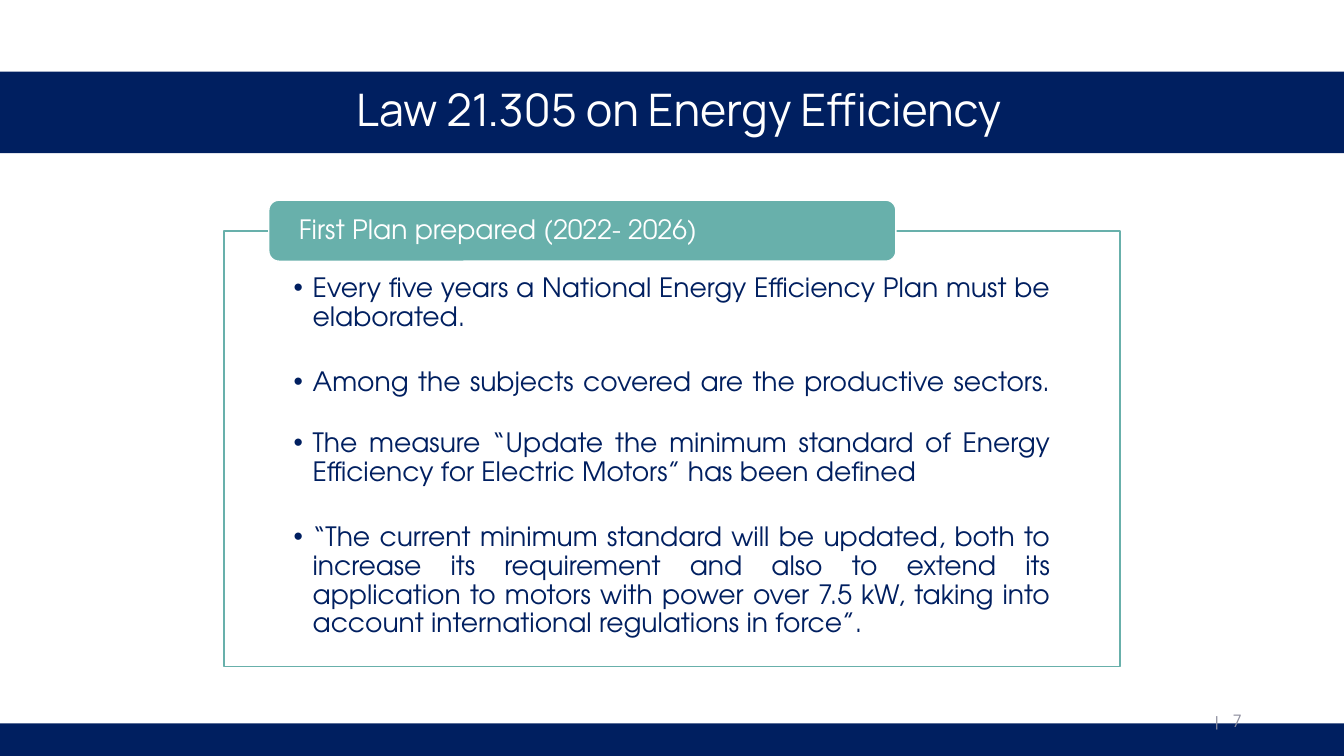
from dataclasses import dataclass

from lxml import etree
from pptx import Presentation
from pptx.dml.color import RGBColor
from pptx.enum.shapes import MSO_SHAPE
from pptx.enum.text import MSO_ANCHOR, MSO_AUTO_SIZE, PP_ALIGN
from pptx.oxml.ns import qn
from pptx.util import Pt

RECT, ROUNDED = MSO_SHAPE.RECTANGLE, MSO_SHAPE.ROUNDED_RECTANGLE
TOP, MIDDLE = MSO_ANCHOR.TOP, MSO_ANCHOR.MIDDLE
LEFT, CENTER, RIGHT, JUSTIFY = PP_ALIGN.LEFT, PP_ALIGN.CENTER, PP_ALIGN.RIGHT, PP_ALIGN.JUSTIFY
NO_AUTOFIT = MSO_AUTO_SIZE.NONE

COLORS = {"navy": "001F60", "teal": "68B0AB", "white": "FFFFFF", "grey": "8C8D9D"}
TITLE_FONT, BODY_FONT = "Manrope", "TeX Gyre Adventor"
BODY_SIZE = 19
SLIDE_WIDTH, SLIDE_HEIGHT = 960, 540
BULLET_INDENT = 13.7


@dataclass
class Block:
    left: float
    top: float
    width: float
    height: float
    fill: str | None = None
    line: str | None = None
    insets: tuple[float, float, float, float] = (7.2, 3.6, 7.2, 3.6)
    anchor: MSO_ANCHOR = MIDDLE


@dataclass
class Duty:
    text: str
    gap_after: float = 26
    full_width: bool = False  # stretch the closing line to both margins


TITLE_BAND = Block(0, 51.1, SLIDE_WIDTH, 58.3, "navy", None, (51, 3, 41, 4))
FOOTER_BAND = Block(0, 516.7, SLIDE_WIDTH, 23.8, "navy")
PLAN_FRAME = Block(160, 165, 640, 311, "white", "teal", (49.7, 31, 49.7, 10.8), TOP)
PLAN_TAB = Block(192, 143, 448, 43.6, "teal", "white", (19.4, 0, 19.4, 0))
PAGE_NUMBER = Block(678.2, 500.4, 216, 28.8)

DUTIES = [
    Duty("Every five years a National Energy Efficiency Plan must be elaborated."),
    Duty("Among the subjects covered are the productive sectors.", 3, True),
    Duty("The measure “Update the minimum standard of Energy Efficiency "
         "for Electric Motors” has been defined"),
    Duty("“The current minimum standard will be updated, both to increase its "
         "requirement and also to extend its application to motors with power over "
         "7.5 kW, taking into account international regulations in force”.", 0),
]


def rgb(name: str) -> RGBColor:
    return RGBColor.from_string(COLORS[name])


def format_block(shape, block: Block) -> None:
    """Place a shape and set its fill, outline and text frame."""
    shape.left, shape.top = Pt(block.left), Pt(block.top)
    shape.width, shape.height = Pt(block.width), Pt(block.height)
    if block.fill:
        shape.fill.solid()
        shape.fill.fore_color.rgb = rgb(block.fill)
    if block.line:
        shape.line.color.rgb = rgb(block.line)
        shape.line.width = Pt(1)
    else:
        shape.line.fill.background()
    frame = shape.text_frame
    frame.word_wrap = True
    frame.auto_size = NO_AUTOFIT
    frame.vertical_anchor = block.anchor
    (frame.margin_left, frame.margin_top,
     frame.margin_right, frame.margin_bottom) = map(Pt, block.insets)


def add_block(slide, block: Block, preset: MSO_SHAPE):
    shape = slide.shapes.add_shape(preset, 0, 0, 0, 0)
    shape.shadow.inherit = False
    format_block(shape, block)
    return shape


def format_paragraph(paragraph, align: PP_ALIGN, spacing: float = 0.9, after: float = 0) -> None:
    paragraph.alignment = align
    paragraph.line_spacing = spacing
    paragraph.space_before = Pt(0)
    paragraph.space_after = Pt(after)


def add_run(paragraph, text: str, size: float, color: str, font: str = BODY_FONT):
    run = paragraph.add_run()
    run.text = text
    run.font.size = Pt(size)
    run.font.name = font
    run.font.color.rgb = rgb(color)
    return run


def add_bullet(paragraph) -> None:
    properties = paragraph._p.get_or_add_pPr()
    properties.set("marL", str(Pt(BULLET_INDENT)))
    properties.set("indent", str(-Pt(BULLET_INDENT)))
    etree.SubElement(properties, qn("a:buChar"), char="•")


def add_closing_break(paragraph) -> None:
    """End with a line break, so that the last line is justified in full."""
    paragraph.add_line_break()
    size = str(BODY_SIZE * 100)
    line_break = paragraph._p.find(qn("a:br"))
    for parent, tag in ((line_break, "a:rPr"), (paragraph._p, "a:endParaRPr")):
        properties = etree.SubElement(parent, qn(tag), sz=size)
        etree.SubElement(properties, qn("a:latin"), typeface=BODY_FONT)


def add_duties(frame) -> None:
    for index, duty in enumerate(DUTIES):
        paragraph = frame.add_paragraph() if index else frame.paragraphs[0]
        format_paragraph(paragraph, JUSTIFY, after=duty.gap_after)
        add_bullet(paragraph)
        add_run(paragraph, duty.text, BODY_SIZE, "navy")
        if duty.full_width:
            add_closing_break(paragraph)


def main() -> None:
    presentation = Presentation()
    presentation.slide_width, presentation.slide_height = Pt(SLIDE_WIDTH), Pt(SLIDE_HEIGHT)
    slide = presentation.slides.add_slide(presentation.slide_layouts[1])

    # Title band
    title = slide.shapes.title
    format_block(title, TITLE_BAND)
    heading = title.text_frame.paragraphs[0]
    format_paragraph(heading, CENTER)
    add_run(heading, "Law 21.305 on Energy Efficiency", 32, "white", TITLE_FONT)

    # Framed list of the plan's contents
    plan = slide.placeholders[1]
    format_block(plan, PLAN_FRAME)
    add_duties(plan.text_frame)

    # Tab on the frame's upper edge
    tab = add_block(slide, PLAN_TAB, ROUNDED)
    tab_label = tab.text_frame.paragraphs[0]
    format_paragraph(tab_label, LEFT)
    add_run(tab_label, "First Plan prepared (2022- 2026)", BODY_SIZE, "white")

    # Footer band and page number
    add_block(slide, FOOTER_BAND, RECT)
    page_number = slide.shapes.add_textbox(0, 0, 0, 0)
    format_block(page_number, PAGE_NUMBER)
    page_line = page_number.text_frame.paragraphs[0]
    format_paragraph(page_line, RIGHT, 1.0)
    separator = add_run(page_line, "| ", 12, "grey")
    separator.font._element.set("spc", "330")
    add_run(page_line, "7", 12, "grey")

    presentation.save("out.pptx")


if __name__ == "__main__":
    main()
